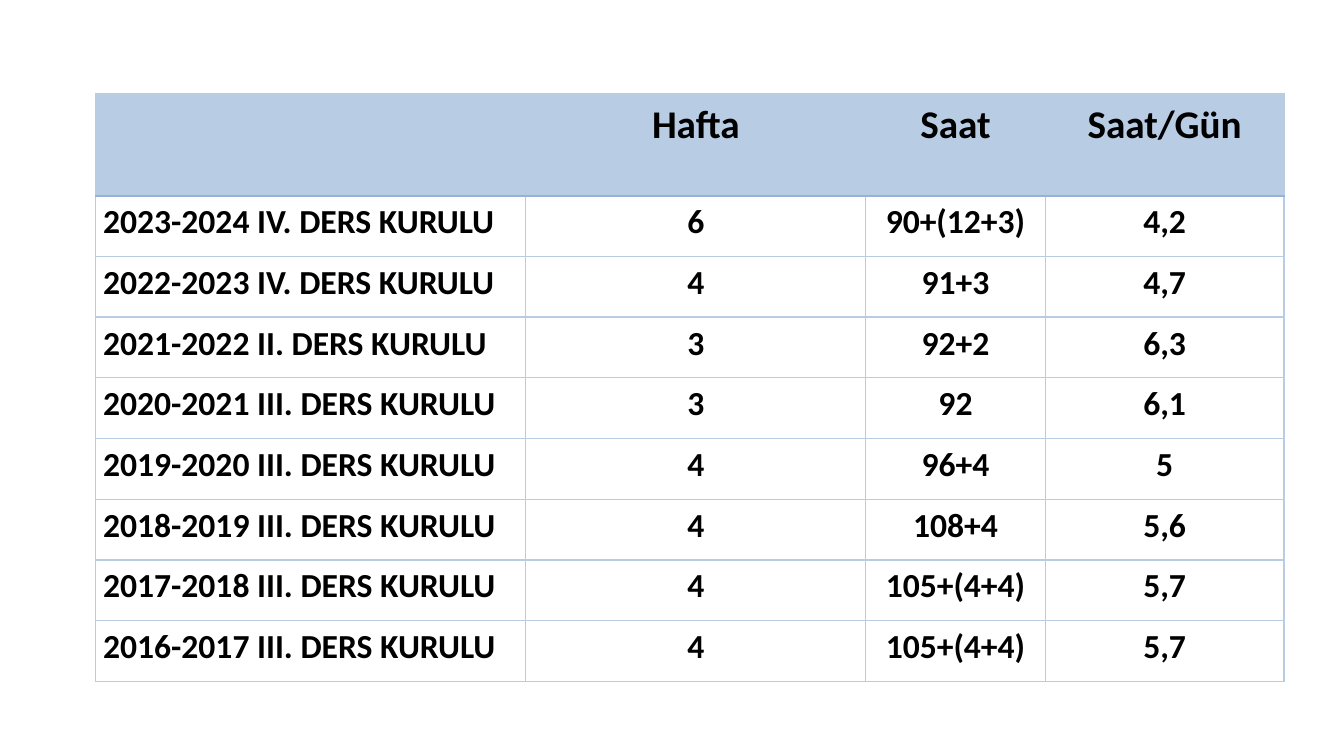
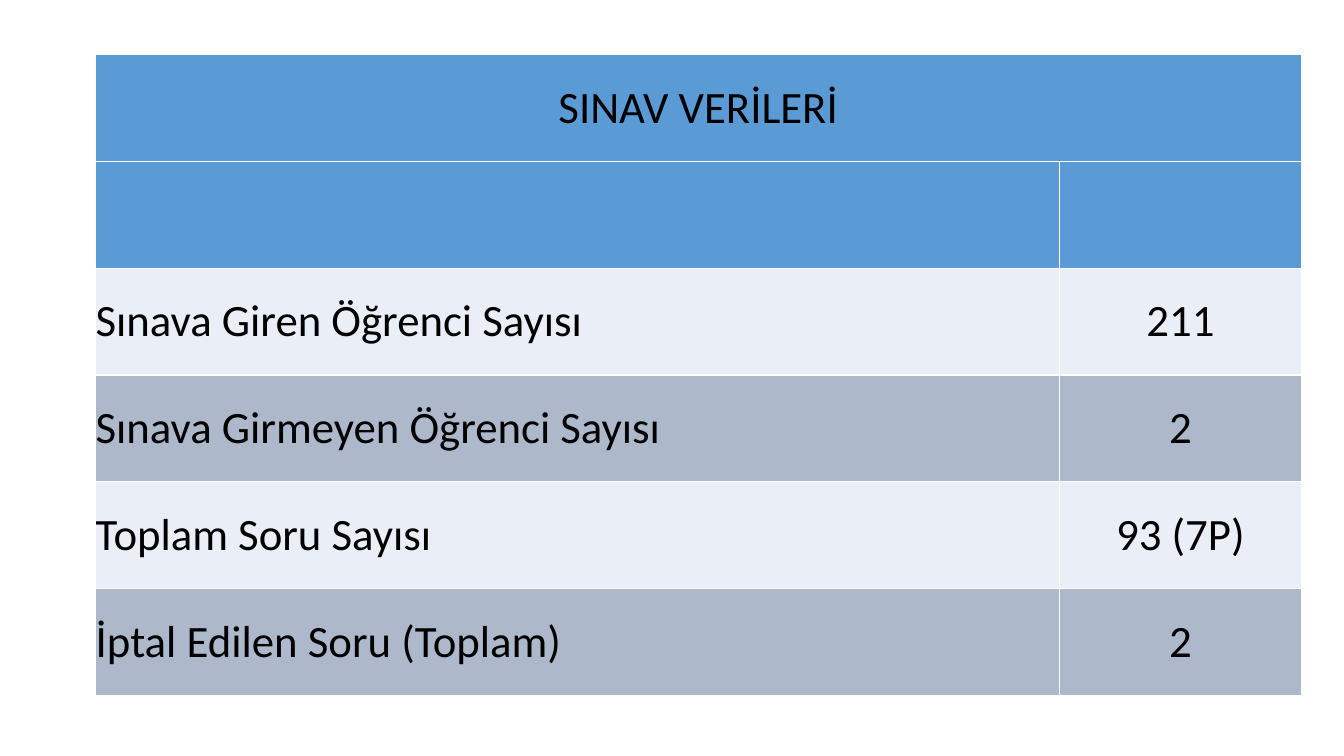
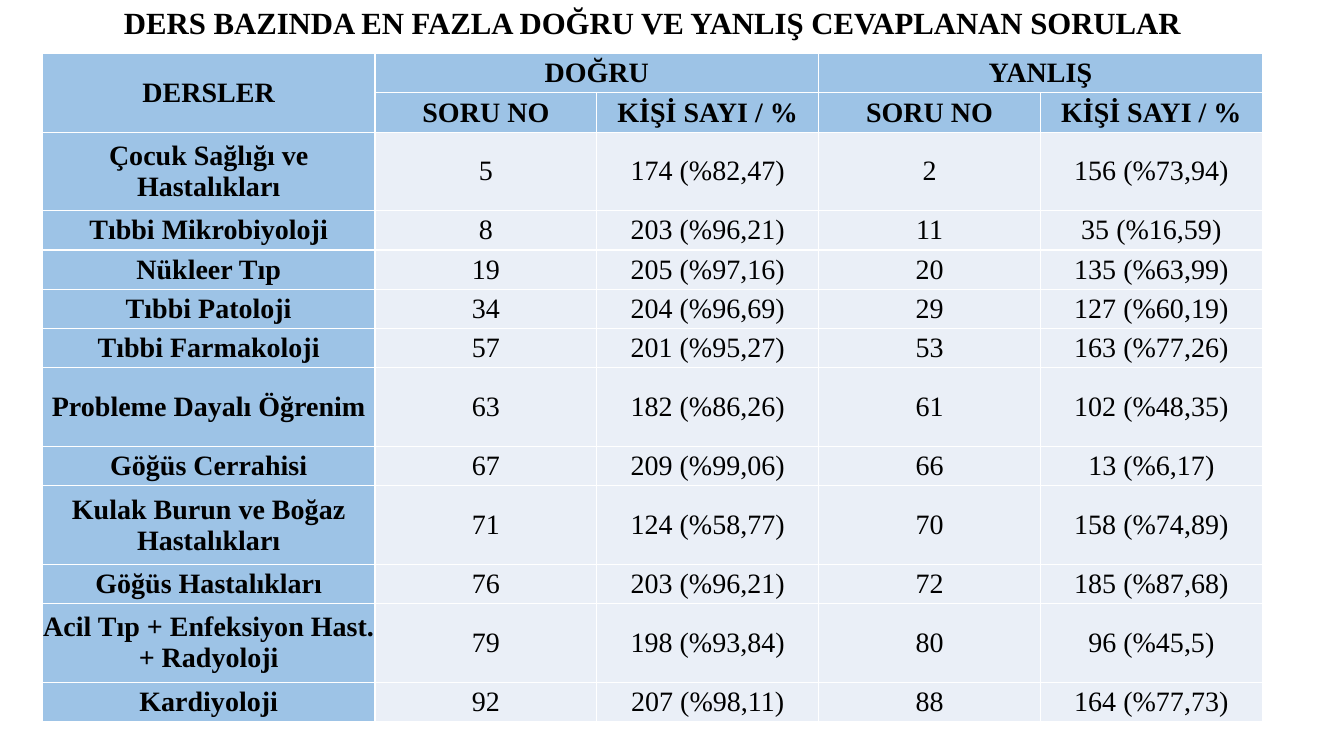
from dataclasses import dataclass

from lxml import etree
from pptx import Presentation
from pptx.dml.color import RGBColor
from pptx.enum.text import MSO_ANCHOR, PP_ALIGN
from pptx.oxml.ns import qn
from pptx.util import Cm, Pt

LEFT, CENTER, JUSTIFY = PP_ALIGN.LEFT, PP_ALIGN.CENTER, PP_ALIGN.JUSTIFY
TOP, MIDDLE = MSO_ANCHOR.TOP, MSO_ANCHOR.MIDDLE


@dataclass(frozen=True)
class Theme:
    sans: str = "Calibri"
    serif: str = "Times New Roman"
    text: str = "000000"
    white: str = "FFFFFF"
    pale_blue: str = "B8CCE4"
    header_rule: str = "95B3D7"
    strong_blue: str = "5B9BD5"
    sky_blue: str = "9DC3E6"
    light_band: str = "EAEFF7"
    dark_band: str = "ADB9CA"
    thin: float = 1
    thick: float = 1.5
    title_size: int = 22
    lesson_size: int = 20
    year_size: int = 24
    year_head_size: int = 28
    exam_size: int = 32


THEME = Theme()

YEARS = [
    ("", "Hafta", "Saat", "Saat/Gün"),
    ("2023-2024 IV. DERS KURULU", "6", "90+(12+3)", "4,2"),
    ("2022-2023 IV. DERS KURULU", "4", "91+3", "4,7"),
    ("2021-2022 II. DERS KURULU", "3", "92+2", "6,3"),
    ("2020-2021 III. DERS KURULU", "3", "92", "6,1"),
    ("2019-2020 III. DERS KURULU", "4", "96+4", "5"),
    ("2018-2019 III. DERS KURULU", "4", "108+4", "5,6"),
    ("2017-2018 III. DERS KURULU", "4", "105+(4+4)", "5,7"),
    ("2016-2017 III. DERS KURULU", "4", "105+(4+4)", "5,7"),
]

EXAM = [
    ("SINAV VERİLERİ", ""),
    ("", ""),
    ("Sınava Giren Öğrenci Sayısı", "211"),
    ("Sınava Girmeyen Öğrenci Sayısı", "2"),
    ("Toplam Soru Sayısı", "93 (7P)"),
    ("İptal Edilen Soru (Toplam)", "2"),
]

LESSONS = [
    ("DERSLER", "DOĞRU", "", "YANLIŞ", ""),
    ("",) + ("SORU NO", "KİŞİ SAYI / %") * 2,
    ("Çocuk Sağlığı ve Hastalıkları", "5", "174 (%82,47)", "2", "156 (%73,94)"),
    ("Tıbbi Mikrobiyoloji", "8", "203 (%96,21)", "11", "35 (%16,59)"),
    ("Nükleer Tıp", "19", "205 (%97,16)", "20", "135 (%63,99)"),
    ("Tıbbi Patoloji", "34", "204 (%96,69)", "29", "127 (%60,19)"),
    ("Tıbbi Farmakoloji", "57", "201 (%95,27)", "53", "163 (%77,26)"),
    ("Probleme Dayalı Öğrenim", "63", "182 (%86,26)", "61", "102 (%48,35)"),
    ("Göğüs Cerrahisi", "67", "209 (%99,06)", "66", "13 (%6,17)"),
    ("Kulak Burun ve Boğaz Hastalıkları", "71", "124 (%58,77)", "70", "158 (%74,89)"),
    ("Göğüs Hastalıkları", "76", "203 (%96,21)", "72", "185 (%87,68)"),
    ("Acil Tıp + Enfeksiyon Hast. + Radyoloji", "79", "198 (%93,84)", "80", "96 (%45,5)"),
    ("Kardiyoloji", "92", "207 (%98,11)", "88", "164 (%77,73)"),
]
TALL_LESSON_ROWS = {2, 7, 9, 11}


def write(tf, text, font=THEME.sans, size=18, bold=False, align=CENTER, spacing=1.0):
    p = tf.paragraphs[0]
    p.alignment = align
    p.line_spacing = spacing
    r = p.add_run()
    r.text = text
    r.font.name = font
    r.font.size = Pt(size)
    r.font.bold = bold
    r.font.color.rgb = RGBColor.from_string(THEME.text)


def set_border(cell, side, color, width):
    """Draw one side of a cell; side is L, R, T or B."""
    ln = etree.SubElement(cell._tc.get_or_add_tcPr(), qn(f"a:ln{side}"), w=str(Pt(width)))
    fill = etree.SubElement(ln, qn("a:solidFill"))
    etree.SubElement(fill, qn("a:srgbClr"), val=color)


def add_grid(slide, left, top, widths, heights, spans=()):
    """Add an unstyled table; sizes in cm, spans as (row, col, last row, last col)."""
    frame = slide.shapes.add_table(len(heights), len(widths), Cm(left), Cm(top),
                                   Cm(sum(widths)), Cm(sum(heights)))
    table = frame.table
    table.first_row = table.horz_banding = False
    for column, width in zip(table.columns, widths):
        column.width = Cm(width)
    for row, height in zip(table.rows, heights):
        row.height = Cm(height)
    for r0, c0, r1, c1 in spans:
        table.cell(r0, c0).merge(table.cell(r1, c1))
    return table


def fill_cell(cell, text, fill=None, line=THEME.white, rules=None,
              anchor=MIDDLE, side_margin=0, **fmt):
    """Format a cell; rules replaces the (colour, width) of single sides."""
    for side in "LRTB":
        set_border(cell, side, *(rules or {}).get(side, (line, THEME.thin)))
    if fill:
        cell.fill.solid()
        cell.fill.fore_color.rgb = RGBColor.from_string(fill)
    else:
        cell.fill.background()
    cell.margin_top = cell.margin_bottom = 0
    cell.margin_left = cell.margin_right = Cm(side_margin)
    cell.vertical_anchor = anchor
    if text:
        write(cell.text_frame, text, **fmt)


def each_cell(table, data):
    for i, values in enumerate(data):
        for j, text in enumerate(values):
            yield i, j, table.cell(i, j), text


def years_table(slide, left, top):
    table = add_grid(slide, left, top, [10.84, 8.57, 4.52, 6.02],
                     [2.57] + [1.53] * (len(YEARS) - 1))
    header_rule = (THEME.header_rule, THEME.thick)
    rules = {0: {"B": header_rule}, 1: {"T": header_rule}}
    for i, j, cell, text in each_cell(table, YEARS):
        head = i == 0
        fill_cell(cell, text, fill=THEME.pale_blue if head else None,
                  line=THEME.pale_blue, rules=rules.get(i), anchor=TOP, side_margin=0.19,
                  size=THEME.year_head_size if head else THEME.year_size, bold=True,
                  align=CENTER if head or j else JUSTIFY, spacing=1.15)


def exam_table(slide, left, top):
    table = add_grid(slide, left, top, [24.3, 6.08], [2.69] * len(EXAM), [(0, 0, 0, 1)])
    bands = THEME.light_band, THEME.dark_band
    for i, j, cell, text in each_cell(table, EXAM):
        fill_cell(cell, text, fill=THEME.strong_blue if i < 2 else bands[i % 2],
                  size=THEME.exam_size, align=CENTER if i == 0 or j else LEFT)


def lessons_title(slide, left, top, width, height):
    tf = slide.shapes.add_textbox(Cm(left), Cm(top), Cm(width), Cm(height)).text_frame
    tf.word_wrap = True
    tf.vertical_anchor = TOP
    tf.margin_top = Cm(0.09)
    write(tf, "DERS BAZINDA EN FAZLA DOĞRU VE YANLIŞ CEVAPLANAN SORULAR",
          font=THEME.serif, size=THEME.title_size, bold=True)


def lessons_table(slide, left, top):
    line = 0.99
    heights = [line * (2 if i in TALL_LESSON_ROWS else 1) for i in range(len(LESSONS))]
    table = add_grid(slide, left, top, [8.38] + [5.59] * 4, heights,
                     [(0, 0, 1, 0), (0, 1, 0, 2), (0, 3, 0, 4)])
    for i, j, cell, text in each_cell(table, LESSONS):
        head = i < 2 or j == 0
        fill_cell(cell, text, fill=THEME.sky_blue if head else THEME.light_band,
                  font=THEME.serif, size=THEME.lesson_size, bold=head)


def main():
    prs = Presentation()
    prs.slide_width, prs.slide_height = Cm(33.87), Cm(19.05)
    years, exam, lessons = (prs.slides.add_slide(prs.slide_layouts[6]) for _ in range(3))
    years_table(years, 2.41, 2.36)
    exam_table(exam, 2.41, 1.38)
    lessons_title(lessons, 1.07, 0, 30.74, 3.02)
    lessons_table(lessons, 1.07, 1.35)
    prs.save("out.pptx")


if __name__ == "__main__":
    main()
